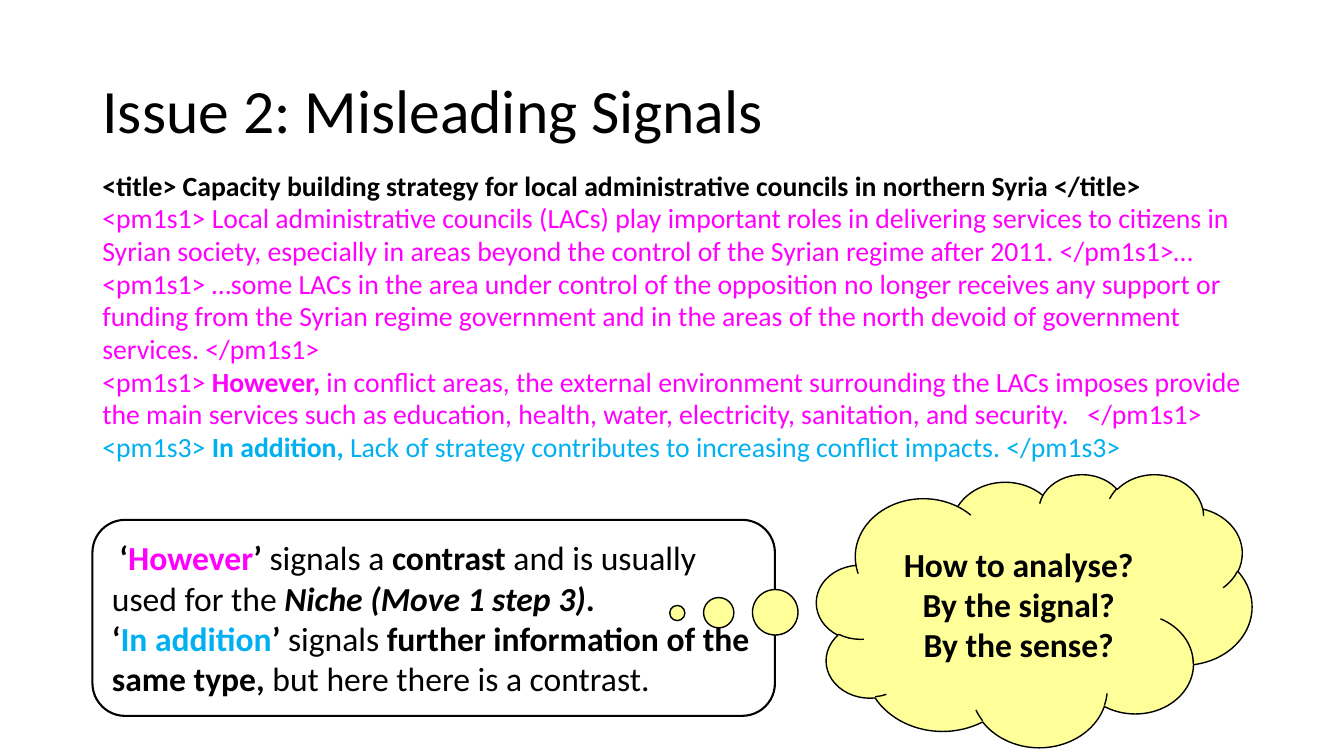
from dataclasses import dataclass

from pptx import Presentation
from pptx.dml.color import RGBColor
from pptx.enum.shapes import MSO_SHAPE
from pptx.enum.text import MSO_ANCHOR, PP_ALIGN
from pptx.util import Cm, Pt


@dataclass(frozen=True)
class Theme:
    font: str = "Calibri"
    title_size: float = 44
    passage_size: float = 19.8
    note_size: float = 24
    black: RGBColor = RGBColor(0x00, 0x00, 0x00)
    magenta: RGBColor = RGBColor(0xFF, 0x00, 0xFF)
    blue: RGBColor = RGBColor(0x00, 0xB0, 0xF0)
    yellow: RGBColor = RGBColor(0xFF, 0xFF, 0x99)


THEME = Theme()

# Each paragraph is a list of runs: (text, style letters, colour)
# Style letters: b for bold, i for italic
PASSAGE = [
    [("<title> Capacity building strategy for local administrative councils "
      "in northern Syria </title>", "b", THEME.black)],
    [("<pm1s1> Local administrative councils (LACs) play important roles in "
      "delivering services to citizens in Syrian society, especially in areas "
      "beyond the control of the Syrian regime after 2011. </pm1s1>… "
      "<pm1s1> …some LACs in the area under control of the opposition no longer "
      "receives any support or funding from the Syrian regime government and in "
      "the areas of the north devoid of government services. </pm1s1>",
      "", THEME.magenta)],
    [("<pm1s1> ", "", THEME.magenta),
     ("However,", "b", THEME.magenta),
     (" in conflict areas, the external environment surrounding the LACs imposes "
      "provide the main services such as education, health, water, electricity, "
      "sanitation, and security.   </pm1s1> ", "", THEME.magenta),
     ("<pm1s3> ", "", THEME.blue),
     ("In addition, ", "b", THEME.blue),
     ("Lack of strategy contributes to increasing conflict impacts. </pm1s3>",
      "", THEME.blue)],
]

SIGNALS = [
    [(" ", "", THEME.black),
     ("‘", "b", THEME.black),
     ("However", "b", THEME.magenta),
     ("’ ", "b", THEME.black),
     ("signals a ", "", THEME.black),
     ("contrast", "b", THEME.black),
     (" and is usually used for the ", "", THEME.black),
     ("Niche (Move 1 step 3)", "bi", THEME.black),
     (".", "b", THEME.black)],
    [("‘", "b", THEME.black),
     ("In addition", "b", THEME.blue),
     ("’", "b", THEME.black),
     (" signals ", "", THEME.black),
     ("further information of the same type, ", "b", THEME.black),
     ("but here there is a contrast.", "", THEME.black)],
]

QUESTIONS = [[(question, "b", THEME.black)] for question in
             ("How to analyse?", "By the signal?", "By the sense?")]


def write_paragraphs(text_frame, paragraphs, size, alignment=PP_ALIGN.LEFT,
                     line_spacing=1.0):
    """Fill a text frame with paragraphs of styled runs."""
    text_frame.word_wrap = True
    for index, runs in enumerate(paragraphs):
        paragraph = (text_frame.add_paragraph() if index
                     else text_frame.paragraphs[0])
        paragraph.alignment = alignment
        paragraph.line_spacing = line_spacing
        paragraph.font.name = THEME.font
        paragraph.font.size = Pt(size)
        for text, style, colour in runs:
            run = paragraph.add_run()
            run.text = text
            run.font.bold = "b" in style
            run.font.italic = "i" in style
            run.font.color.rgb = colour


def set_title(slide, text):
    title = slide.shapes.title
    title.left, title.top = Cm(2.33), Cm(1.01)
    title.width, title.height = Cm(29.21), Cm(3.68)
    title.text_frame.vertical_anchor = MSO_ANCHOR.MIDDLE
    write_paragraphs(title.text_frame, [[(text, "", THEME.black)]],
                     THEME.title_size, line_spacing=0.9)


def add_passage(slide, paragraphs, left, top, width, height):
    box = slide.shapes.add_textbox(left, top, width, height)
    box.text_frame.margin_top = 0
    write_paragraphs(box.text_frame, paragraphs, THEME.passage_size,
                     line_spacing=0.98)


def add_note(slide, kind, paragraphs, left, top, width, height,
             line_width, fill=None, alignment=PP_ALIGN.LEFT):
    """Add an outlined shape with vertically centred text."""
    shape = slide.shapes.add_shape(kind, left, top, width, height)
    shape.shadow.inherit = False
    if fill is None:
        shape.fill.background()
    else:
        shape.fill.solid()
        shape.fill.fore_color.rgb = fill
    shape.line.color.rgb = THEME.black
    shape.line.width = Pt(line_width)
    shape.text_frame.vertical_anchor = MSO_ANCHOR.MIDDLE
    write_paragraphs(shape.text_frame, paragraphs, THEME.note_size, alignment)
    return shape


def main():
    presentation = Presentation()
    presentation.slide_width, presentation.slide_height = Cm(33.87), Cm(19.05)
    slide = presentation.slides.add_slide(presentation.slide_layouts[5])

    # Title and annotated passage
    set_title(slide, "Issue 2: Misleading Signals")
    add_passage(slide, PASSAGE, Cm(2.33), Cm(4.29), Cm(29.21), Cm(8.97))

    # Explanation of the signal words
    add_note(slide, MSO_SHAPE.ROUNDED_RECTANGLE, SIGNALS,
             Cm(2.33), Cm(13.1), Cm(17.2), Cm(4.94), line_width=1.5)

    # Thought cloud, with its bubbles leading to the explanation
    cloud = add_note(slide, MSO_SHAPE.CLOUD_CALLOUT, QUESTIONS,
                     Cm(20.58), Cm(11.94), Cm(10.97), Cm(6.88), line_width=1,
                     fill=THEME.yellow, alignment=PP_ALIGN.CENTER)
    cloud.adjustments[0] = -0.82
    cloud.adjustments[1] = 0.01

    presentation.save("out.pptx")


if __name__ == "__main__":
    main()
